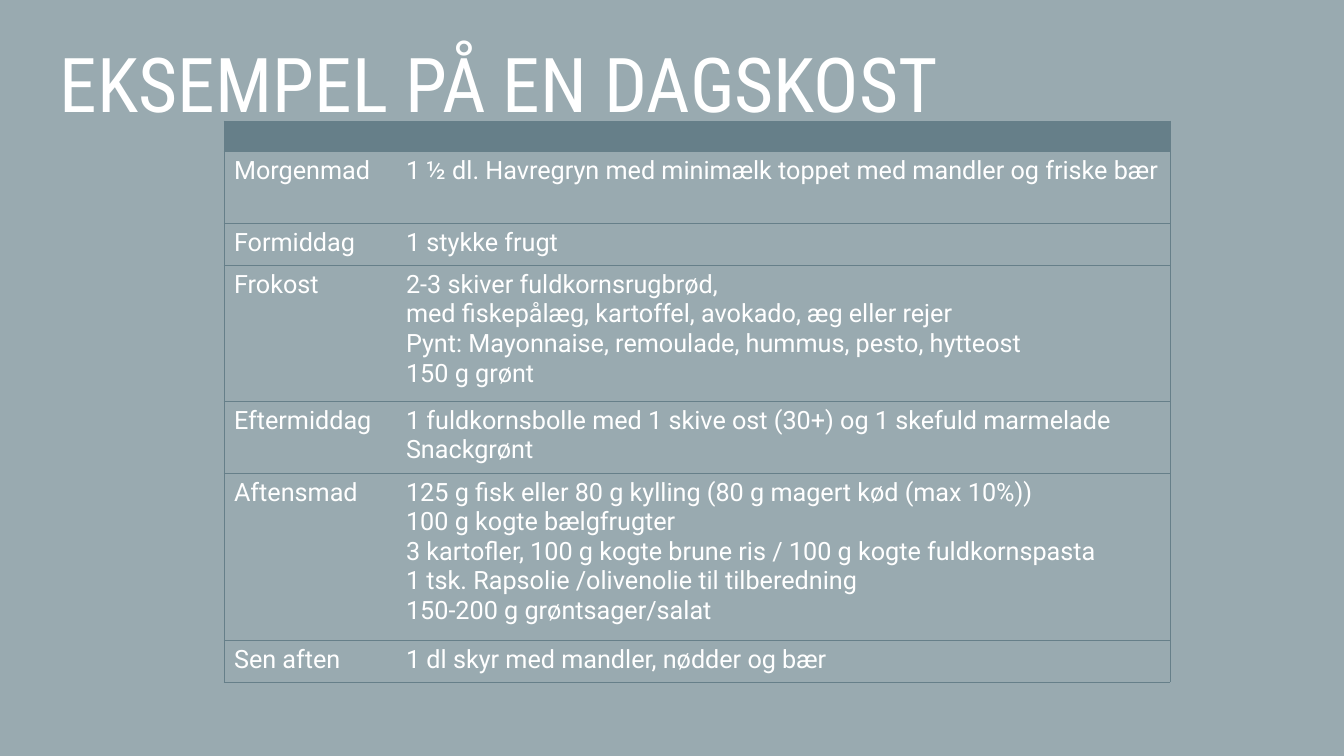
from lxml.etree import SubElement
from pptx import Presentation
from pptx.dml.color import RGBColor
from pptx.enum.text import MSO_ANCHOR
from pptx.oxml.ns import qn
from pptx.util import Pt

PX = 914400 / 100.8
WHITE = RGBColor(0xFF, 0xFF, 0xFF)
BACK = RGBColor(0x99, 0xAA, 0xB0)
SLATE = RGBColor(0x66, 0x7F, 0x89)

MEALS = [
    ("", ""),
    ("Morgenmad", "1 ½ dl. Havregryn med minimælk toppet med mandler og friske bær"),
    ("Formiddag", "1 stykke frugt"),
    ("Frokost", "2-3 skiver fuldkornsrugbrød,\n"
                "med fiskepålæg, kartoffel, avokado, æg eller rejer\n"
                "Pynt: Mayonnaise, remoulade, hummus, pesto, hytteost\n"
                "150 g grønt"),
    ("Eftermiddag", "1 fuldkornsbolle med 1 skive ost (30+) og 1 skefuld marmelade\n"
                    "Snackgrønt"),
    ("Aftensmad", "125 g fisk eller 80 g kylling (80 g magert kød (max 10%))\n"
                  "100 g kogte bælgfrugter\n"
                  "3 kartofler, 100 g kogte brune ris / 100 g kogte fuldkornspasta\n"
                  "1 tsk. Rapsolie /olivenolie til tilberedning\n"
                  "150-200 g grøntsager/salat"),
    ("Sen aften", "1 dl skyr med mandler, nødder og bær"),
]
WIDTHS = [172, 774]
HEIGHTS = [30, 72, 42, 136, 72, 167, 42]


def px(*sizes):
    return [round(size * PX) for size in sizes]


def style(frame, font, size):
    for para in frame.paragraphs:
        for run in para.runs:
            run.font.name = font
            run.font.size = Pt(size)
            run.font.color.rgb = WHITE


deck = Presentation()
deck.slide_width, deck.slide_height = px(1344, 756)
slide = deck.slides.add_slide(deck.slide_layouts[6])

# Background
slide.background.fill.solid()
slide.background.fill.fore_color.rgb = BACK

# Title
title = slide.shapes.add_textbox(*px(60, 52, 1225, 139)).text_frame
title.word_wrap = True
title.vertical_anchor = MSO_ANCHOR.TOP
title.margin_left = title.margin_right = title.margin_top = title.margin_bottom = 0
title.text = "EKSEMPEL PÅ EN DAGSKOST"
title.paragraphs[0].line_spacing = 0.83
style(title, "Roboto Condensed", 54)

# Meal table
box = px(224, 121, sum(WIDTHS), sum(HEIGHTS))
table = slide.shapes.add_table(len(MEALS), len(WIDTHS), *box).table
table.first_row = table.horz_banding = False
for column, width in zip(table.columns, px(*WIDTHS)):
    column.width = width
for row, height in zip(table.rows, px(*HEIGHTS)):
    row.height = height

for r, meal in enumerate(MEALS):
    for c, text in enumerate(meal):
        cell = table.cell(r, c)
        cell.text = text
        style(cell.text_frame, "Roboto", 18)

        # Borders: every edge but the one between the columns
        props = cell._tc.get_or_add_tcPr()
        inner = "lnR" if c == 0 else "lnL"
        for edge in ("lnL", "lnR", "lnT", "lnB"):
            line = SubElement(props, qn("a:" + edge), w=str(Pt(0.5)))
            if edge == inner:
                SubElement(line, qn("a:noFill"))
            else:
                fill = SubElement(line, qn("a:solidFill"))
                SubElement(fill, qn("a:srgbClr"), val=str(SLATE))

        # Fill: only the empty top band is solid
        if r == 0:
            cell.fill.solid()
            cell.fill.fore_color.rgb = SLATE
            para = cell.text_frame.paragraphs[0]
            SubElement(para._p, qn("a:endParaRPr"), sz="1000")
        else:
            cell.fill.background()

deck.save("out.pptx")
